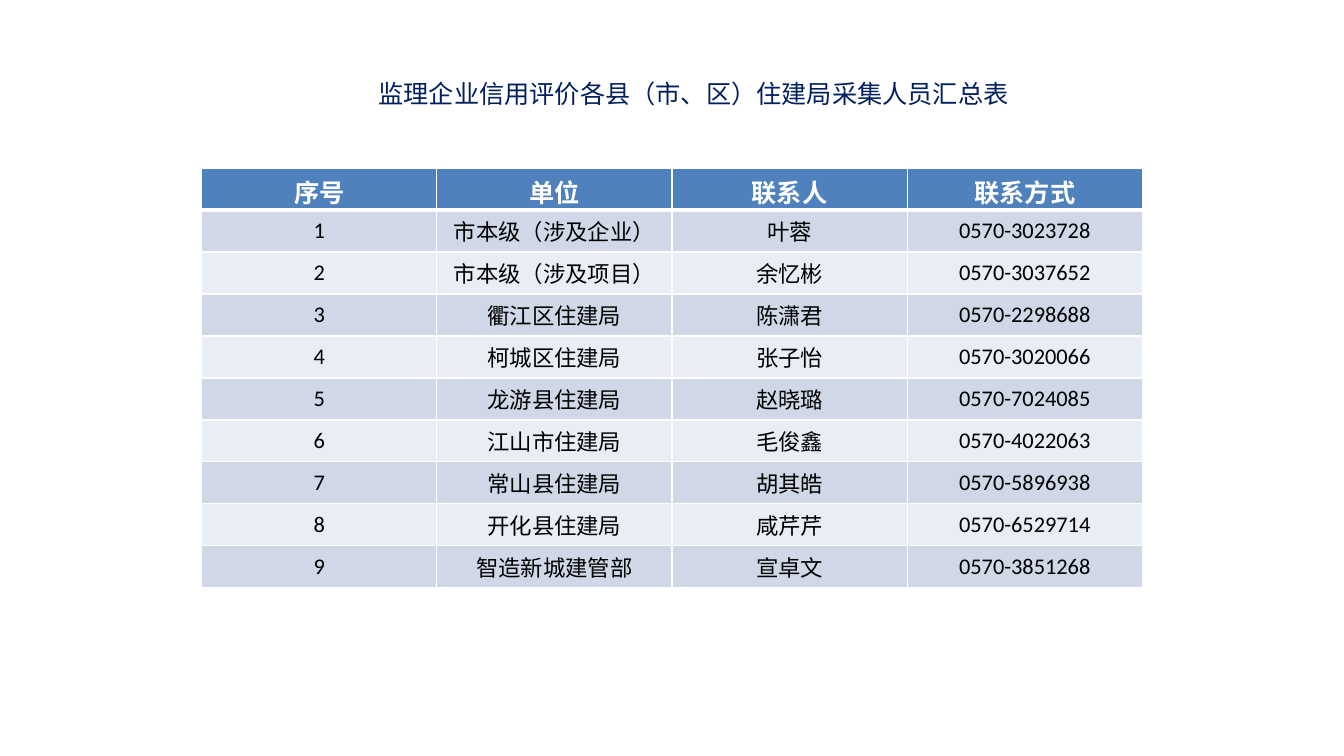
from lxml import etree
from pptx import Presentation
from pptx import util as u
from pptx.dml.color import RGBColor
from pptx.enum import text
from pptx.oxml.ns import qn

TITLE = "监理企业信用评价各县（市、区）住建局采集人员汇总表"
HEADINGS = ("序号", "单位", "联系人", "联系方式")
CONTACTS = (
    ("市本级（涉及企业）", "叶蓉", "0570-3023728"),
    ("市本级（涉及项目）", "余忆彬", "0570-3037652"),
    ("衢江区住建局", "陈潇君", "0570-2298688"),
    ("柯城区住建局", "张子怡", "0570-3020066"),
    ("龙游县住建局", "赵晓璐", "0570-7024085"),
    ("江山市住建局", "毛俊鑫", "0570-4022063"),
    ("常山县住建局", "胡其皓", "0570-5896938"),
    ("开化县住建局", "咸芹芹", "0570-6529714"),
    ("智造新城建管部", "宣卓文", "0570-3851268"),
)


def color(value):
    return RGBColor.from_string(value)


class Sheet:
    """Style and current slide; places are given in grid columns and rows."""

    COLUMNS, ROWS = 40, 18
    NAVY, BLUE, WHITE, BLACK = "002060", "4F81BD", "FFFFFF", "000000"
    BANDS = ("D0D8E8", "E9EDF4")

    def __init__(self, deck):
        self.page = deck.slides.add_slide(deck.slide_layouts[6])
        self.column = deck.slide_width / self.COLUMNS
        self.row = deck.slide_height / self.ROWS

    def place(self, left, top, width, height):
        return (round(left * self.column), round(top * self.row),
                round(width * self.column), round(height * self.row))

    def label(self, frame, words, font, size, ink, bold=False):
        frame.text = words
        para = frame.paragraphs[0]
        para.alignment = text.PP_ALIGN.CENTER
        style = para.runs[0].font
        style.name, style.size, style.bold = font, u.Pt(size), bold
        style.color.rgb = color(ink)
        return para

    def title(self, words, *area):
        frame = self.page.shapes.add_textbox(*self.place(*area)).text_frame
        frame.word_wrap = True
        frame.vertical_anchor = text.MSO_ANCHOR.BOTTOM
        frame.margin_bottom = u.Inches(0.13)
        para = self.label(frame, words, "Noto Sans CJK SC", 18, self.NAVY)
        # First-line indent moves the centred line to the right
        para._p.get_or_add_pPr().set("indent", str(u.Inches(0.46)))

    def borders(self, cell, top, bottom):
        properties = cell._tc.get_or_add_tcPr()
        for side, points in (("L", 1), ("R", 1), ("T", top), ("B", bottom)):
            line = etree.SubElement(properties, qn(f"a:ln{side}"), w=str(u.Pt(points)))
            fill = etree.SubElement(line, qn("a:solidFill"))
            etree.SubElement(fill, qn("a:srgbClr"), val=self.WHITE)

    def cell(self, cell, words, number):
        header = number == 0
        cell.vertical_anchor = text.MSO_ANCHOR.MIDDLE
        self.borders(cell, top=3 if number == 1 else 1, bottom=3 if header else 1)
        cell.fill.solid()
        if header:
            cell.fill.fore_color.rgb = color(self.BLUE)
            self.label(cell.text_frame, words, "Arial", 18, self.WHITE, bold=True)
        else:
            cell.fill.fore_color.rgb = color(self.BANDS[(number - 1) % 2])
            cell.margin_left = cell.margin_right = u.Inches(0.07)
            cell.margin_top = cell.margin_bottom = 0
            self.label(cell.text_frame, words, "Calibri", 16, self.BLACK)

    def table(self, records, *area):
        shape = self.page.shapes.add_table(
            len(records), len(records[0]), *self.place(*area))
        for number, record in enumerate(records):
            for position, words in enumerate(record):
                self.cell(shape.table.cell(number, position), words, number)


def main():
    deck = Presentation()
    deck.slide_width, deck.slide_height = u.Inches(13.33), u.Inches(7.5)
    sheet = Sheet(deck)

    # Title above the table
    sheet.title(TITLE, 3.7, 0.5, 32.5, 2.4)

    # Contact table with numbered rows
    numbered = [(str(number), *contact) for number, contact in enumerate(CONTACTS, 1)]
    sheet.table([HEADINGS, *numbered], 6, 4, 28, 10)

    deck.save("out.pptx")


if __name__ == "__main__":
    main()
